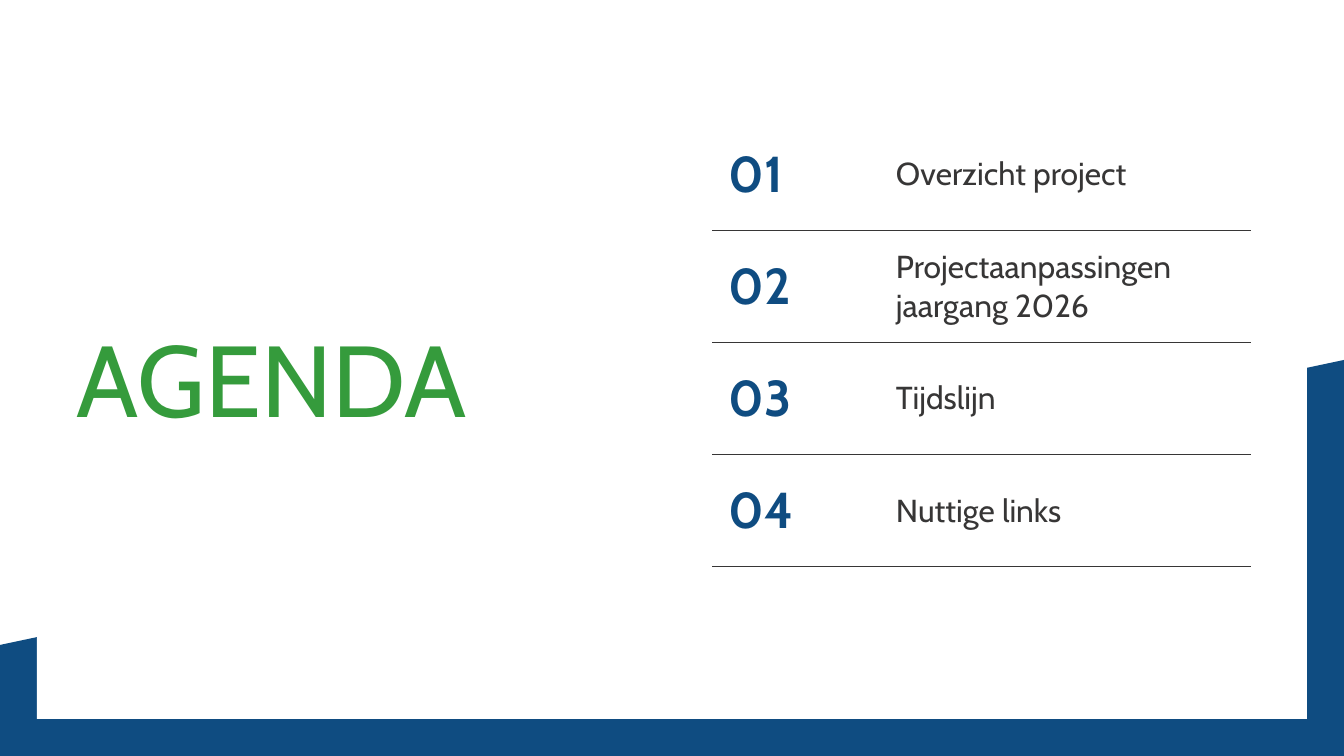
from dataclasses import dataclass

from lxml import etree
from pptx import Presentation
from pptx import util as u
from pptx.dml import color
from pptx.enum import shapes, text
from pptx.oxml import ns

TITLE = "AGENDA"
AGENDA = [
    ("01", "Overzicht project"),
    ("02", "Projectaanpassingen jaargang 2026"),
    ("03", "Tijdslijn"),
    ("04", "Nuttige links"),
]


@dataclass(frozen=True)
class Theme:
    font: str = "Cabin"
    blue: str = "0F4C81"
    green: str = "359B3C"
    ink: str = "373636"
    white: str = "FFFFFF"
    title_size: int = 54
    number_size: int = 27
    topic_size: int = 17
    rule_width: float = 0.5


THEME = Theme()
WIDTH, HEIGHT = 1344, 756
SCALE = 914400 / 134.4
FRAME = 37
WEDGE = [(WIDTH, 360), (WIDTH, HEIGHT), (0, HEIGHT), (0, 645)]
TITLE_BOX = (77, 90, 582, 589)
TABLE_LEFT, TABLE_TOP, TABLE_HEIGHT = 712, 118, 449
COLUMNS = (167, 372)
SIDE_INSET, END_INSET = 17, 16


def px(length):
    return u.Emu(round(length * SCALE))


def paint(shape, fill):
    shape.shadow.inherit = False
    shape.fill.solid()
    shape.fill.fore_color.rgb = color.RGBColor.from_string(fill)
    shape.line.fill.background()


def write(frame, words, size, ink, bold=False):
    frame.text = words
    para = frame.paragraphs[0]
    para.alignment = text.PP_ALIGN.LEFT
    font = para.runs[0].font
    font.name, font.size, font.bold = THEME.font, u.Pt(size), bold
    font.color.rgb = color.RGBColor.from_string(ink)
    return para


def set_borders(cell, ruled):
    properties = cell._tc.get_or_add_tcPr()
    for index, side in enumerate(("lnL", "lnR", "lnT", "lnB")):
        line = etree.Element(ns.qn(f"a:{side}"), w=str(u.Pt(THEME.rule_width)))
        if side in ruled:
            fill = etree.SubElement(line, ns.qn("a:solidFill"))
            etree.SubElement(fill, ns.qn("a:srgbClr"), val=THEME.ink)
        else:
            etree.SubElement(line, ns.qn("a:noFill"))
        properties.insert(index, line)


def add_frame(slide):
    builder = slide.shapes.build_freeform(*WEDGE[0], scale=SCALE)
    builder.add_line_segments(WEDGE[1:], close=True)
    paint(builder.convert_to_shape(), THEME.blue)
    panel = slide.shapes.add_shape(
        shapes.MSO_SHAPE.RECTANGLE,
        px(FRAME), px(FRAME), px(WIDTH - 2 * FRAME), px(HEIGHT - 2 * FRAME),
    )
    paint(panel, THEME.white)


def add_title(slide):
    box = slide.shapes.add_textbox(*map(px, TITLE_BOX))
    frame = box.text_frame
    frame.word_wrap = True
    frame.vertical_anchor = text.MSO_ANCHOR.MIDDLE
    frame.margin_left = frame.margin_right = 0
    frame.margin_top = frame.margin_bottom = 0
    para = write(frame, TITLE, THEME.title_size, THEME.green)
    para.line_spacing = 0.9


def add_agenda(slide):
    table = slide.shapes.add_table(
        len(AGENDA), len(COLUMNS),
        px(TABLE_LEFT), px(TABLE_TOP), px(sum(COLUMNS)), px(TABLE_HEIGHT),
    ).table
    table.first_row = table.horz_banding = False
    for column, width in zip(table.columns, COLUMNS):
        column.width = px(width)
    styles = [
        (THEME.number_size, THEME.blue, True),
        (THEME.topic_size, THEME.ink, False),
    ]
    for row, entry in enumerate(AGENDA):
        table.rows[row].height = px(TABLE_HEIGHT / len(AGENDA))
        ruled = ("lnT", "lnB") if row else ("lnB",)
        for column, (words, style) in enumerate(zip(entry, styles)):
            cell = table.cell(row, column)
            cell.margin_left = cell.margin_right = px(SIDE_INSET)
            cell.margin_top = cell.margin_bottom = px(END_INSET)
            cell.vertical_anchor = text.MSO_ANCHOR.MIDDLE
            cell.fill.background()
            set_borders(cell, ruled)
            write(cell.text_frame, words, *style)


def main():
    deck = Presentation()
    deck.slide_width, deck.slide_height = px(WIDTH), px(HEIGHT)
    slide = deck.slides.add_slide(deck.slide_layouts[6])
    add_frame(slide)
    add_title(slide)
    add_agenda(slide)
    deck.save("out.pptx")


if __name__ == "__main__":
    main()
